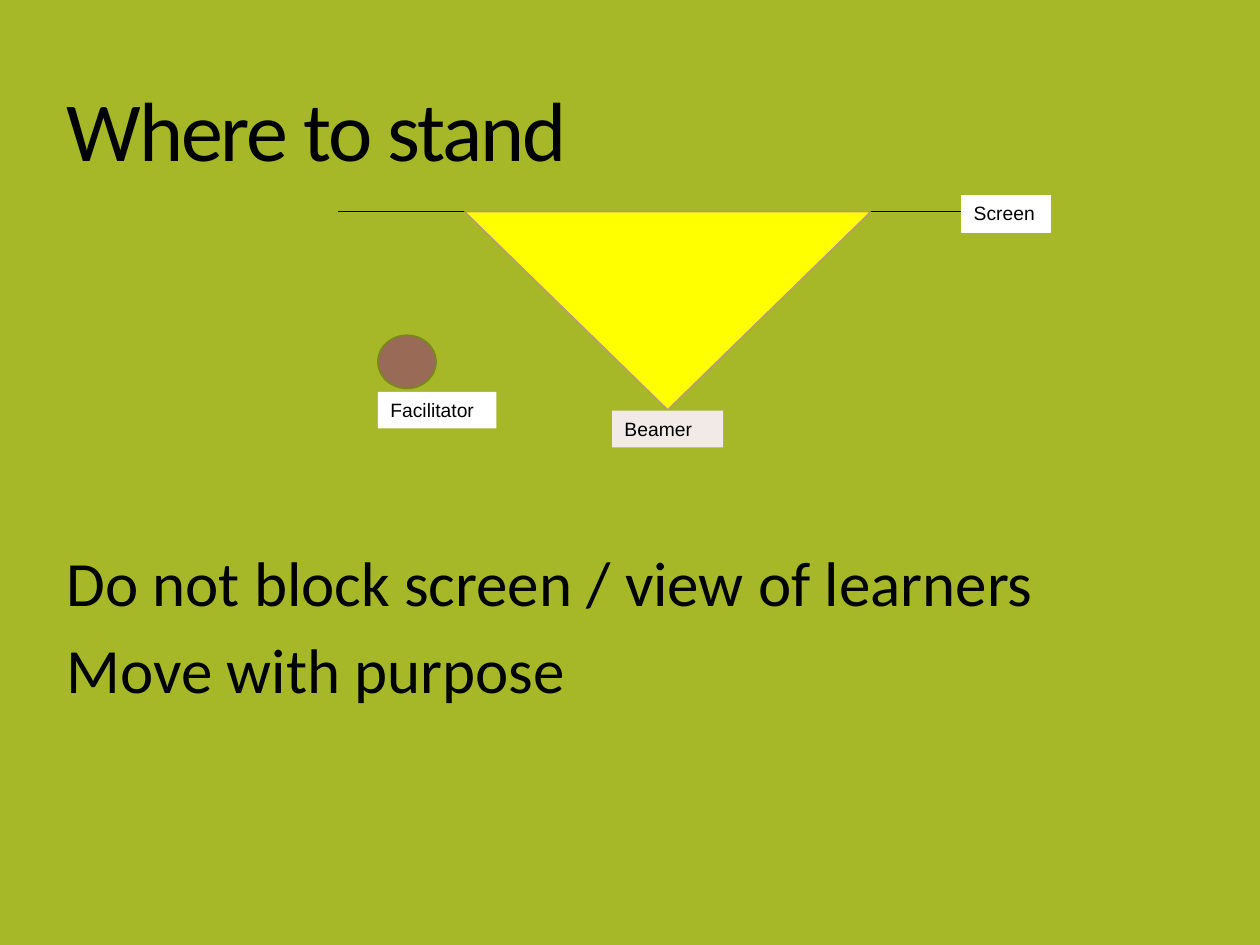
from lxml import etree
from pptx import Presentation
from pptx.dml.color import RGBColor
from pptx.enum.shapes import MSO_CONNECTOR, MSO_SHAPE
from pptx.enum.text import MSO_ANCHOR, PP_ALIGN
from pptx.oxml.ns import qn
from pptx.util import Cm, Pt

RECT, OVAL, TRIANGLE = MSO_SHAPE.RECTANGLE, MSO_SHAPE.OVAL, MSO_SHAPE.ISOSCELES_TRIANGLE
STRAIGHT = MSO_CONNECTOR.STRAIGHT
TOP, BOTTOM, LEFT = MSO_ANCHOR.TOP, MSO_ANCHOR.BOTTOM, PP_ALIGN.LEFT
COLORS = {
    "background": "A6B727",
    "text": "000000",
    "beam": "FFFF00",
    "beam_line": "BA9585",
    "person": "996A56",
    "person_line": "7B871D",
    "label": "FFFFFF",
    "beamer": "F1EAE7",
}


def color(name):
    return RGBColor.from_string(COLORS[name])


def add_filled(kind, x, y, w, h, fill, line=None, width=0.75):
    sp = s.shapes.add_shape(kind, Cm(x), Cm(y), Cm(w), Cm(h))
    sp.shadow.inherit = False
    sp.fill.solid()
    sp.fill.fore_color.rgb = color(fill)
    if line:
        sp.line.color.rgb = color(line)
        sp.line.width = Pt(width)
    else:
        sp.line.fill.background()
    return sp


prs = Presentation()
prs.slide_width, prs.slide_height = Cm(25.4), Cm(19.05)
s = prs.slides.add_slide(prs.slide_layouts[6])
s.background.fill.solid()
s.background.fill.fore_color.rgb = color("background")

texts = [
    (1.32, 24.31, 2.39, BOTTOM, ["Where to stand"], 48, 0.8, 0, -120),
    (11.07, 21.59, 4.27, TOP,
     ["Do not block screen / view of learners", "Move with purpose"], 36, 0.85, 13, 0),
]
for y, w, h, anchor, lines, size, spacing, before, tracking in texts:
    tf = s.shapes.add_textbox(Cm(1.09), Cm(y), Cm(w), Cm(h)).text_frame
    tf.word_wrap = True
    tf.vertical_anchor = anchor
    tf.text = "\n".join(lines)
    for p in tf.paragraphs:
        p.line_spacing = spacing
        p.space_before = Pt(before)
        r = p.runs[0]
        r.font.name = "Calibri"
        r.font.size = Pt(size)
        r.font.color.rgb = color("text")
        if tracking:
            r.font._element.set("spc", str(tracking))

screen = s.shapes.add_connector(STRAIGHT, Cm(6.81), Cm(4.27), Cm(19.69), Cm(4.27))
screen.line.color.rgb = color("text")
screen.line.width = Pt(0.75)
etree.SubElement(screen._element.spPr, qn("a:effectLst"))

beam = add_filled(TRIANGLE, 9.37, 4.27, 8.18, 3.99, "beam", "beam_line")
beam.rotation = 180
add_filled(OVAL, 7.62, 6.76, 1.17, 1.07, "person", "person_line", 1)

labels = [
    ("Beamer", 12.34, 8.28, 2.24, "beamer", None),
    ("Screen", 19.38, 3.94, 1.8, "label", "label"),
    ("Facilitator", 7.62, 7.9, 2.39, "label", None),
]
for text, x, y, w, fill, line in labels:
    tf = add_filled(RECT, x, y, w, 0.74, fill, line).text_frame
    tf.word_wrap = True
    tf.vertical_anchor = TOP
    tf.text = text
    p = tf.paragraphs[0]
    p.alignment = LEFT
    r = p.runs[0]
    r.font.name = "Arial"
    r.font.size = Pt(11)
    r.font.color.rgb = color("text")

prs.save("out.pptx")
